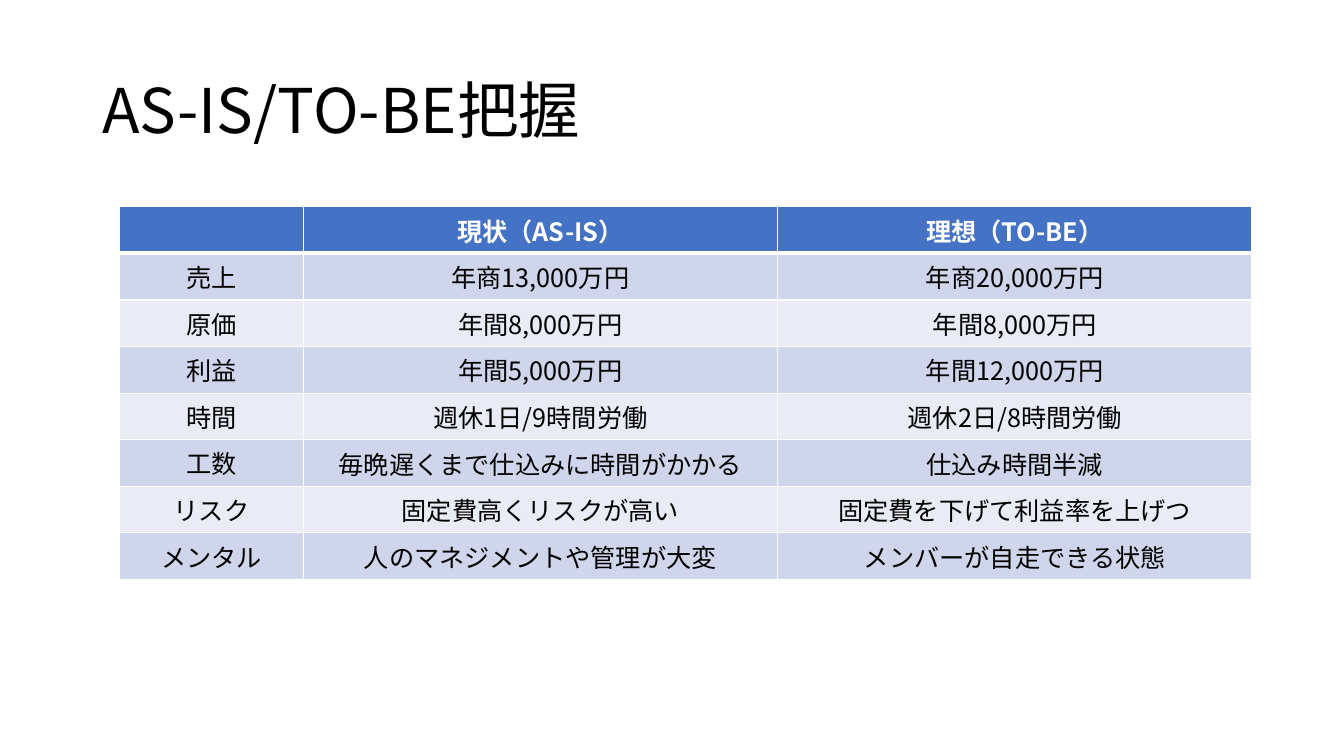
from dataclasses import dataclass

from lxml.etree import SubElement
from pptx import Presentation
from pptx.dml.color import RGBColor
from pptx.enum.text import MSO_ANCHOR, PP_ALIGN
from pptx.oxml.ns import qn
from pptx.util import Cm, Pt


@dataclass(frozen=True)
class Theme:
    font: str = "Noto Sans CJK JP"
    ink: str = "000000"
    white: str = "FFFFFF"
    header: str = "4472C4"
    bands: tuple = ("CFD5EA", "E9EBF5")
    title_size: int = 44
    table_size: int = 18
    rule: int = 1
    header_rule: int = 3


THEME = Theme()

COMPARISON = [
    ("", "現状（AS-IS）", "理想（TO-BE）"),
    ("売上", "年商13,000万円", "年商20,000万円"),
    ("原価", "年間8,000万円", "年間8,000万円"),
    ("利益", "年間5,000万円", "年間12,000万円"),
    ("時間", "週休1日/9時間労働", "週休2日/8時間労働"),
    ("工数", "毎晩遅くまで仕込みに時間がかかる", "仕込み時間半減"),
    ("リスク", "固定費高くリスクが高い", "固定費を下げて利益率を上げつ"),
    ("メンタル", "人のマネジメントや管理が大変", "メンバーが自走できる状態"),
]


def format_runs(paragraph, size, color, bold=False):
    for run in paragraph.runs:
        run.font.name = THEME.font
        run.font.size = Pt(size)
        run.font.bold = bold
        run.font.color.rgb = RGBColor.from_string(color)
        SubElement(run.font._element, qn("a:ea"), typeface=THEME.font)


def draw_borders(cell, top, bottom):
    properties = cell._tc.get_or_add_tcPr()
    widths = {"L": THEME.rule, "R": THEME.rule, "T": top, "B": bottom}
    for side, width in widths.items():
        border = SubElement(properties, qn(f"a:ln{side}"), w=str(Pt(width)))
        fill = SubElement(border, qn("a:solidFill"))
        SubElement(fill, qn("a:srgbClr"), val=THEME.white)


def format_cell(cell, content, row, column):
    is_header = row == 0
    draw_borders(
        cell,
        top=THEME.header_rule if row == 1 else THEME.rule,
        bottom=THEME.header_rule if is_header else THEME.rule,
    )
    cell.fill.solid()
    background = THEME.header if is_header else THEME.bands[(row - 1) % 2]
    cell.fill.fore_color.rgb = RGBColor.from_string(background)
    if not is_header and column > 0:
        cell.vertical_anchor = MSO_ANCHOR.MIDDLE
    cell.text_frame.text = content
    label = cell.text_frame.paragraphs[0]
    label.alignment = PP_ALIGN.CENTER
    label.font.size = Pt(THEME.table_size)
    format_runs(label, THEME.table_size, THEME.white if is_header else THEME.ink, is_header)


def place_title(slide, left, top, width, height):
    heading = slide.shapes.title
    heading.left, heading.top, heading.width, heading.height = left, top, width, height
    frame = heading.text_frame
    frame.text = "AS-IS/TO-BE把握"
    frame.word_wrap = True
    frame.vertical_anchor = MSO_ANCHOR.MIDDLE
    line = frame.paragraphs[0]
    line.alignment = PP_ALIGN.LEFT
    line.line_spacing = 0.9
    format_runs(line, THEME.title_size, THEME.ink)


def place_comparison(slide, left, top, width, height):
    comparison = slide.shapes.add_table(
        len(COMPARISON), len(COMPARISON[0]), left, top, width, height
    ).table
    topic_width = Cm(4.62)
    state_width = (width - topic_width) // 2
    for column, column_width in zip(comparison.columns, (topic_width, state_width, state_width)):
        column.width = column_width
    for row, entries in enumerate(COMPARISON):
        for column, content in enumerate(entries):
            format_cell(comparison.cell(row, column), content, row, column)


def main():
    deck = Presentation()
    deck.slide_width, deck.slide_height = Cm(33.87), Cm(19.05)
    slide = deck.slides.add_slide(deck.slide_layouts[5])
    place_title(slide, Cm(2.33), Cm(1.01), Cm(29.21), Cm(3.68))
    place_comparison(slide, Cm(3.02), Cm(5.21), Cm(28.53), Cm(8.23))
    deck.save("out.pptx")


if __name__ == "__main__":
    main()
